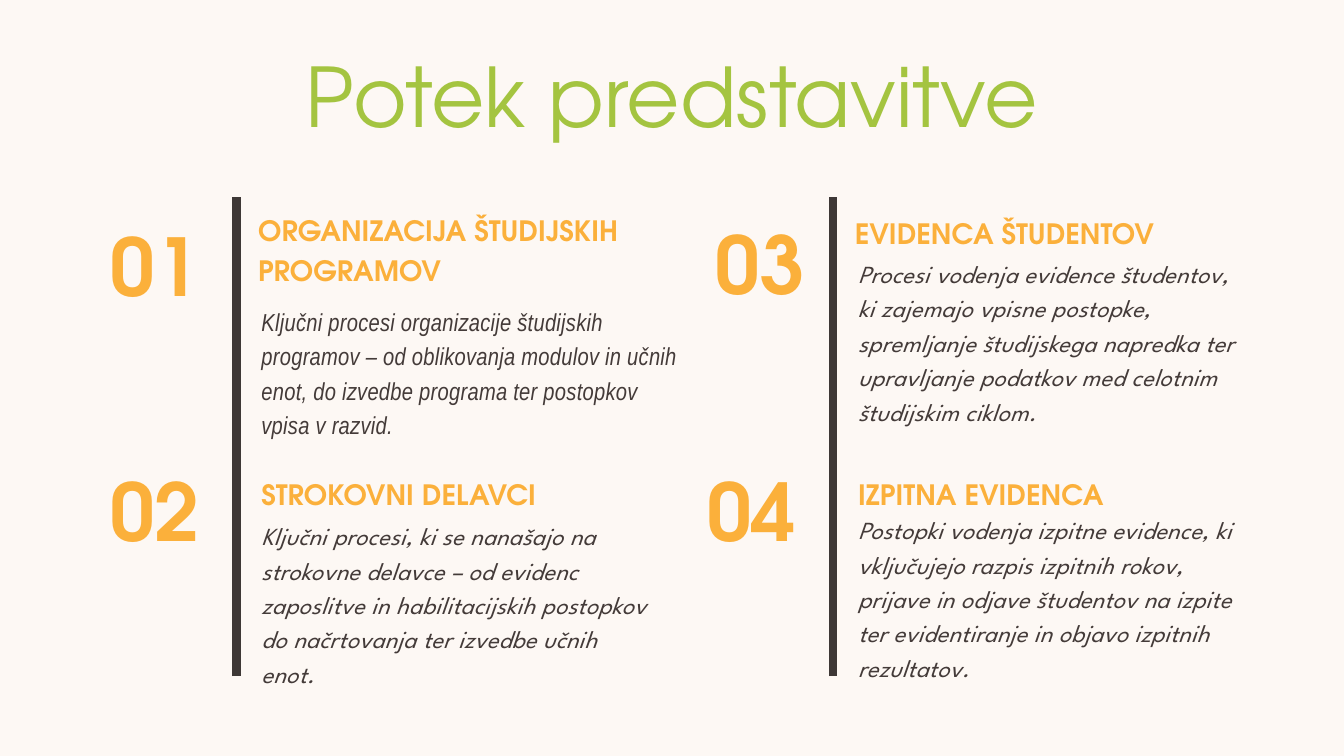
from dataclasses import dataclass

from lxml.etree import SubElement
from pptx import Presentation
from pptx.dml.color import RGBColor
from pptx.enum.shapes import MSO_CONNECTOR
from pptx.enum.text import MSO_ANCHOR, MSO_AUTO_SIZE, PP_ALIGN
from pptx.oxml.ns import qn
from pptx.util import Inches, Pt

COLORS = {
    "background": "FDF8F4",
    "title": "A4C440",
    "accent": "FBB03B",
    "rule": "3E3836",
    "body": "443B39",
}
DISPLAY_FONT = "TeX Gyre Adventor"
BODY_FONT = "League Spartan"


@dataclass
class TextStyle:
    """Describe the look of a one-paragraph text."""
    font: str
    size: float
    color: str
    line_spacing: float
    bold: bool = False
    italic: bool = False
    tracking: float = 0
    alignment: PP_ALIGN = PP_ALIGN.LEFT


@dataclass
class Topic:
    """Hold a topic's wording and the offsets of its parts in the column."""
    number: str
    heading: str
    body: str
    number_at: tuple
    heading_at: tuple
    body_at: tuple
    body_size: tuple = (5.81, 2.53)
    body_font: str = BODY_FONT


TITLE_STYLE = TextStyle(DISPLAY_FONT, 88, "title", 123.2, alignment=PP_ALIGN.CENTER)
NUMBER_STYLE = TextStyle(DISPLAY_FONT, 85.3, "accent", 119.5, bold=True,
                         alignment=PP_ALIGN.CENTER)
HEADING_STYLE = TextStyle(DISPLAY_FONT, 30, "accent", 42, bold=True)

LEFT_TOPICS = [
    Topic("01", "ORGANIZACIJA ŠTUDIJSKIH PROGRAMOV",
          "Ključni procesi organizacije študijskih programov – od oblikovanja "
          "modulov in učnih enot, do izvedbe programa ter postopkov vpisa v razvid.",
          (0.01, 0.06), (2.42, 0.17), (2.47, 1.56), (6.41, 2.02), "Arial Narrow"),
    Topic("02", "STROKOVNI DELAVCI",
          "Ključni procesi, ki se nanašajo na strokovne delavce – od evidenc "
          "zaposlitve in habilitacijskih postopkov do načrtovanja ter izvedbe "
          "učnih enot.",
          (0, 3.71), (2.47, 4.09), (2.47, 4.75)),
]
RIGHT_TOPICS = [
    Topic("03", "EVIDENCA ŠTUDENTOV",
          "Procesi vodenja evidence študentov, ki zajemajo vpisne postopke, "
          "spremljanje študijskega napredka ter upravljanje podatkov med "
          "celotnim študijskim ciklom.",
          (0.13, 0.03), (2.42, 0.21), (2.47, 0.85)),
    Topic("04", "IZPITNA EVIDENCA",
          "Postopki vodenja izpitne evidence, ki vključujejo razpis izpitnih "
          "rokov, prijave in odjave študentov na izpite ter evidentiranje in "
          "objavo izpitnih rezultatov.",
          (0, 3.71), (2.47, 4.09), (2.47, 4.66)),
]


def color(name):
    """Return the named colour."""
    return RGBColor.from_string(COLORS[name])


def write_text(shape, text, style):
    """Fill a shape with one styled run and no margins."""
    frame = shape.text_frame
    frame.word_wrap = True
    frame.auto_size = MSO_AUTO_SIZE.SHAPE_TO_FIT_TEXT
    frame.vertical_anchor = MSO_ANCHOR.TOP
    frame.margin_left = frame.margin_right = 0
    frame.margin_top = frame.margin_bottom = 0
    paragraph = frame.paragraphs[0]
    paragraph.alignment = style.alignment
    paragraph.line_spacing = Pt(style.line_spacing)
    paragraph.space_before = Pt(0)
    run = paragraph.add_run()
    run.text = text
    run.font.name = style.font
    run.font.size = Pt(style.size)
    run.font.bold = style.bold
    run.font.italic = style.italic
    run.font.color.rgb = color(style.color)
    if style.tracking:
        run.font._element.set("spc", str(round(style.tracking * 100)))


def add_text(slide, left, top, width, height, text, style):
    """Add a styled text box, measured in inches."""
    shape = slide.shapes.add_textbox(
        Inches(left), Inches(top), Inches(width), Inches(height))
    write_text(shape, text, style)


def add_title(slide, left, top, width, height):
    """Place the slide title in its placeholder."""
    title = slide.shapes.title
    title.left, title.top = Inches(left), Inches(top)
    title.width, title.height = Inches(width), Inches(height)
    write_text(title, "Potek predstavitve", TITLE_STYLE)


def add_rule(slide, left, top, height):
    """Draw the thick vertical rule of a column."""
    rule = slide.shapes.add_connector(
        MSO_CONNECTOR.STRAIGHT, Inches(left), Inches(top + height),
        Inches(left), Inches(top))
    rule.line.color.rgb = color("rule")
    rule.line.width = Pt(9)
    SubElement(rule._element.spPr, qn("a:effectLst"))


def add_topic(slide, left, top, topic):
    """Add a topic's number, heading and description."""
    body_style = TextStyle(topic.body_font, 26.3, "body", 36.9,
                           italic=True, tracking=0.3)
    parts = [
        (topic.heading_at, (5.81, 0.56), topic.heading, HEADING_STYLE),
        (topic.number_at, (1.77, 1.58), topic.number, NUMBER_STYLE),
        (topic.body_at, topic.body_size, topic.body, body_style),
    ]
    for (across, down), size, text, style in parts:
        add_text(slide, left + across, top + down, *size, text, style)


def add_column(slide, left, top, height, topics):
    """Add a rule with its topics."""
    add_rule(slide, left + 2.1, top, height)
    for topic in topics:
        add_topic(slide, left, top, topic)


def main():
    """Build and save the agenda slide."""
    presentation = Presentation()
    presentation.slide_width = Inches(20)
    presentation.slide_height = Inches(11.25)
    slide = presentation.slides.add_slide(presentation.slide_layouts[5])
    slide.background.fill.solid()
    slide.background.fill.fore_color.rgb = color("background")
    add_title(slide, 1.81, 0.43, 16.37, 1.65)
    for left, topics in ((1.42, LEFT_TOPICS), (10.3, RIGHT_TOPICS)):
        add_column(slide, left, 2.93, 7.13, topics)
    presentation.save("out.pptx")


if __name__ == "__main__":
    main()
